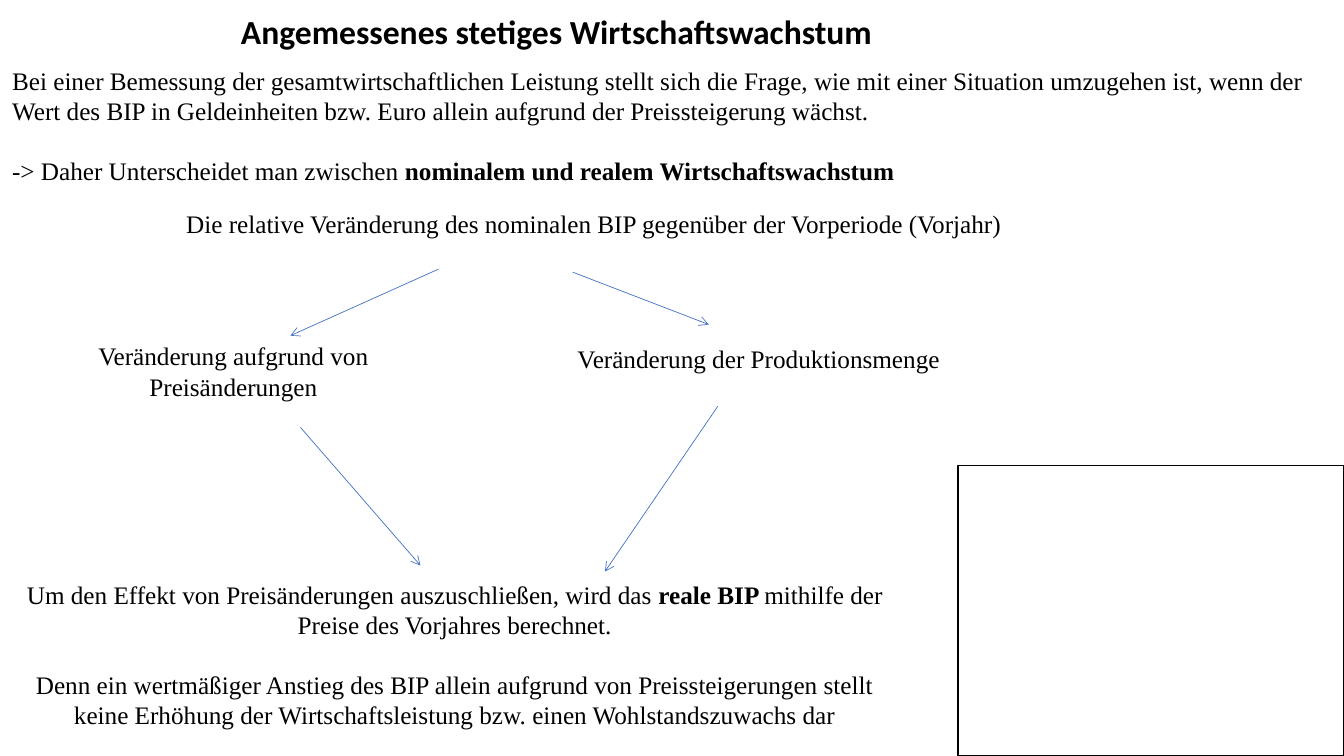
from lxml import etree
from pptx import Presentation
from pptx.dml.color import RGBColor
from pptx.enum.shapes import MSO_CONNECTOR, MSO_SHAPE
from pptx.enum.text import MSO_ANCHOR, MSO_AUTO_SIZE, PP_ALIGN
from pptx.oxml.ns import qn
from pptx.util import Inches, Pt

BLACK = RGBColor(0x00, 0x00, 0x00)
BLUE = RGBColor(0x44, 0x72, 0xC4)
LEFT, CENTER = PP_ALIGN.LEFT, PP_ALIGN.CENTER
TOP, MIDDLE = MSO_ANCHOR.TOP, MSO_ANCHOR.MIDDLE
NO_AUTOFIT = MSO_AUTO_SIZE.NONE
STRAIGHT = MSO_CONNECTOR.STRAIGHT
RECTANGLE = MSO_SHAPE.RECTANGLE
TITLE_AND_BODY = 1


class GrowthSlide:
    title_font, title_size = "Calibri", Pt(24)
    body_font, body_size = "Times New Roman", Pt(18)
    paragraph_gap = Pt(20.7)

    def __init__(self, presentation):
        layout = presentation.slide_layouts[TITLE_AND_BODY]
        self.slide = presentation.slides.add_slide(layout)

    def place(self, shape, box):
        shape.left, shape.top, shape.width, shape.height = map(Inches, box)

    def fill_text(self, shape, paragraphs, alignment, font, size, anchor=TOP):
        """Each paragraph is a list of (text, bold) runs."""
        frame = shape.text_frame
        frame.word_wrap = True
        frame.auto_size = NO_AUTOFIT
        frame.vertical_anchor = anchor
        frame.margin_left = frame.margin_right = Inches(0.1)
        frame.margin_top = frame.margin_bottom = Inches(0.05)
        for index, runs in enumerate(paragraphs):
            paragraph = frame.paragraphs[0] if index == 0 else frame.add_paragraph()
            paragraph.alignment = alignment
            paragraph.line_spacing = 1.0
            paragraph.space_before = self.paragraph_gap if index else Pt(0)
            for text, bold in runs:
                run = paragraph.add_run()
                run.text = text
                run.font.name, run.font.size = font, size
                run.font.bold = bold
                run.font.color.rgb = BLACK

    def title(self, box, text):
        shape = self.slide.shapes.title
        self.place(shape, box)
        self.fill_text(shape, [[(text, True)]], LEFT, self.title_font, self.title_size, MIDDLE)

    def body(self, box, paragraphs):
        shape = self.slide.placeholders[1]
        self.place(shape, box)
        self.fill_text(shape, paragraphs, LEFT, self.body_font, self.body_size)
        for paragraph in shape.text_frame.paragraphs:
            properties = paragraph._p.get_or_add_pPr()
            properties.set("marL", "0")
            properties.set("indent", "0")
            etree.SubElement(properties, qn("a:buNone"))

    def text(self, box, paragraphs):
        shape = self.slide.shapes.add_textbox(*map(Inches, box))
        self.fill_text(shape, paragraphs, CENTER, self.body_font, self.body_size)

    def arrow(self, start, end):
        connector = self.slide.shapes.add_connector(STRAIGHT, *map(Inches, start + end))
        connector.line.color.rgb = BLUE
        connector.line.width = Pt(0.5)
        etree.SubElement(connector.line._get_or_add_ln(), qn("a:tailEnd"), type="arrow")
        etree.SubElement(connector._element.spPr, qn("a:effectLst"))

    def frame(self, box):
        shape = self.slide.shapes.add_shape(RECTANGLE, *map(Inches, box))
        shape.shadow.inherit = False
        shape.fill.background()
        shape.line.color.rgb = BLACK
        shape.line.width = Pt(1)


def main():
    presentation = Presentation()
    presentation.slide_width, presentation.slide_height = Inches(13.33), Inches(7.5)
    growth = GrowthSlide(presentation)

    # Heading and introduction
    growth.title((2.29, 0.05, 7.99, 0.51), "Angemessenes stetiges Wirtschaftswachstum")
    growth.body((0.02, 0.6, 13.31, 1.31), [
        [("Bei einer Bemessung der gesamtwirtschaftlichen Leistung stellt sich die Frage, "
          "wie mit einer Situation umzugehen ist, wenn der Wert des BIP in Geldeinheiten "
          "bzw. Euro allein aufgrund der Preissteigerung wächst.", False)],
        [("-> Daher Unterscheidet man zwischen ", False),
         ("nominalem und realem Wirtschaftswachstum", True)],
    ])

    # Nominal change and its two causes
    for box, text in (
        ((0.97, 2.02, 9.84, 0.4),
         "Die relative Veränderung des nominalen BIP gegenüber der Vorperiode (Vorjahr)"),
        ((0.1, 3.33, 4.43, 0.7), "Veränderung aufgrund von Preisänderungen"),
        ((5.31, 3.36, 4.43, 0.4), "Veränderung der Produktionsmenge"),
    ):
        growth.text(box, [[(text, False)]])

    # Conclusion
    growth.text((0.02, 5.7, 8.98, 1.61), [
        [("Um den Effekt von Preisänderungen auszuschließen, wird das ", False),
         ("reale BIP ", True),
         ("mithilfe der Preise des Vorjahres berechnet.", False)],
        [("Denn ein wertmäßiger Anstieg des BIP allein aufgrund von Preissteigerungen "
          "stellt keine Erhöhung der Wirtschaftsleistung bzw. einen Wohlstandszuwachs dar",
          False)],
    ])

    # Arrows from the change to its causes and on to the conclusion
    for start, end in (
        ((4.35, 2.67), (2.88, 3.33)),
        ((5.68, 2.7), (7.03, 3.22)),
        ((7.12, 4.03), (6, 5.67)),
        ((2.98, 4.24), (4.17, 5.61)),
    ):
        growth.arrow(start, end)

    # Empty frame in the lower right corner
    growth.frame((9.5, 4.62, 3.83, 2.88))

    presentation.save("out.pptx")


if __name__ == "__main__":
    main()
